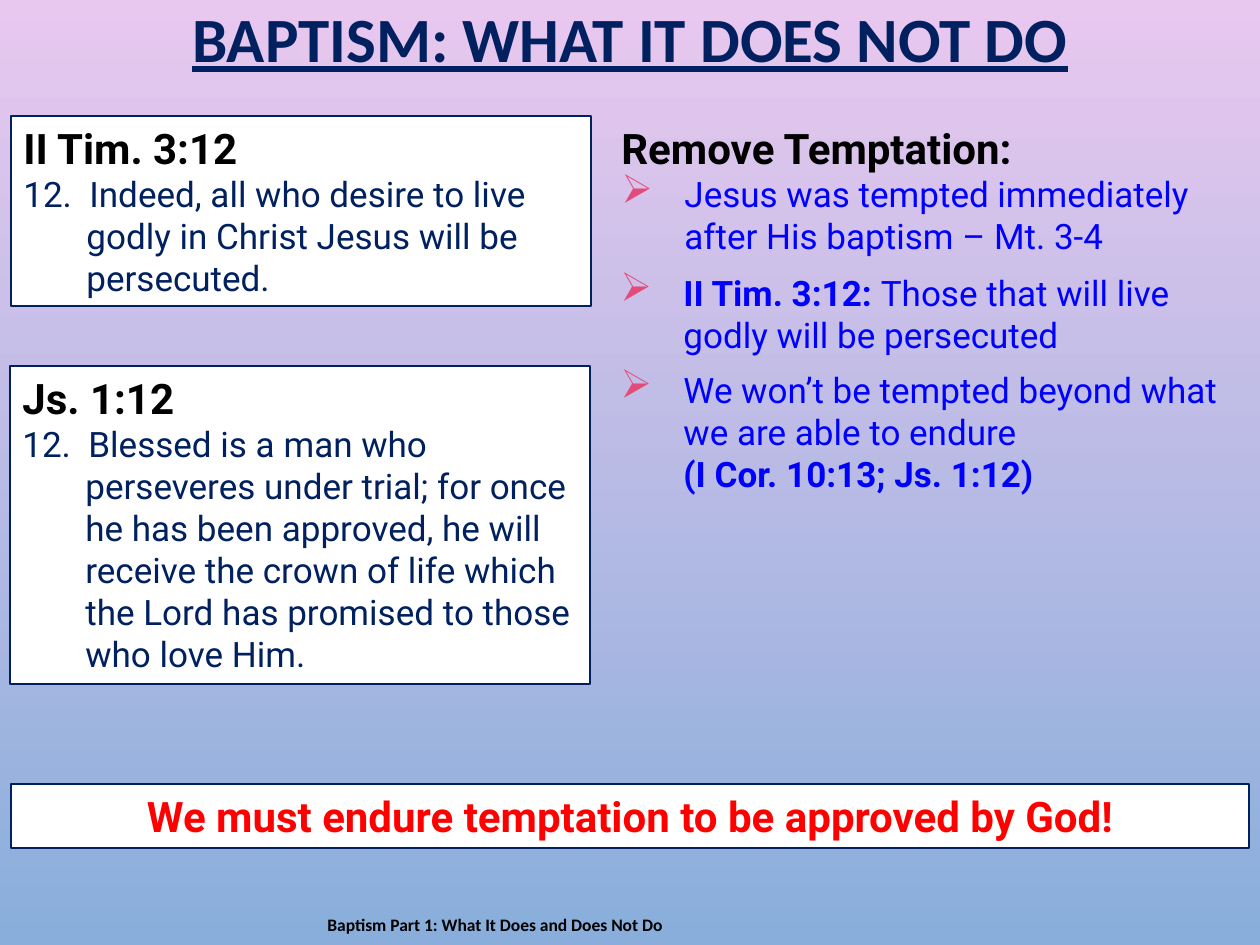
"""Build the slide on what baptism does not do."""
from dataclasses import dataclass

from lxml.etree import SubElement
from pptx import Presentation
from pptx.dml.color import RGBColor
from pptx.enum.shapes import MSO_SHAPE
from pptx.enum.text import MSO_ANCHOR, MSO_AUTO_SIZE, PP_ALIGN
from pptx.oxml.ns import qn
from pptx.util import Pt

PX = 914400 / 126


@dataclass(frozen=True)
class Theme:
    sky_top: str = "E9C8EF"
    sky_bottom: str = "89AEDB"
    navy: str = "002060"
    black: str = "000000"
    white: str = "FFFFFF"
    blue: str = "0000FF"
    red: str = "FF0000"
    bullet: str = "E34B7A"
    title_font: str = "Calibri"
    body_font: str = "Roboto"
    title_size: int = 36
    heading_size: int = 24
    body_size: int = 20
    footer_size: int = 10


THEME = Theme()
INDENT = 63

TITLE = "BAPTISM: WHAT IT DOES NOT DO"
FOOTER = "Baptism Part 1: What It Does and Does Not Do"
BANNER = "We must endure temptation to be approved by God!"

VERSES = [
    ((11, 116, 580, 190), "II Tim. 3:12",
     "12.  Indeed, all who desire to live godly in Christ Jesus will be persecuted."),
    ((10, 366, 580, 318), "Js. 1:12",
     "12.  Blessed is a man who perseveres under trial; for once he has been approved, "
     "he will receive the crown of life which the Lord has promised to those who love Him."),
]

POINTS = [
    ((609, 116, 652, 149), [
        ("heading", [("Remove Temptation:", True)]),
        ("bullet", [("Jesus was tempted immediately after His baptism – Mt. 3-4", False)]),
    ]),
    ((608, 265, 652, 97), [
        ("bullet", [("II Tim. 3:12: ", True), ("Those that will live godly will be persecuted", False)]),
    ]),
    ((608, 362, 652, 140), [
        ("bullet", [("We won’t be tempted beyond what we are able to endure", False)]),
        ("reference", [("(I Cor. 10:13; Js. 1:12)", True)]),
    ]),
]

STYLES = {
    "heading": (THEME.heading_size, THEME.black),
    "verse": (THEME.body_size, THEME.navy),
    "bullet": (THEME.body_size, THEME.blue),
    "reference": (THEME.body_size, THEME.blue),
    "banner": (THEME.heading_size, THEME.red),
}


def px(value):
    return round(value * PX)


def place(shape, frame):
    shape.left, shape.top, shape.width, shape.height = map(px, frame)


def style_font(font, name, size, colour, bold):
    font.name, font.size, font.bold = name, Pt(size), bold
    font.color.rgb = RGBColor.from_string(colour)


def indent_paragraph(para, kind):
    properties = para._p.get_or_add_pPr()
    properties.set("marL", str(px(INDENT)))
    properties.set("indent", str(0 if kind == "reference" else -px(INDENT)))
    if kind == "reference":
        para.level = 1
    if kind == "bullet":
        colour = SubElement(properties, qn("a:buClr"))
        SubElement(colour, qn("a:srgbClr"), val=THEME.bullet)
        SubElement(properties, qn("a:buSzPct"), val="115000")
        SubElement(properties, qn("a:buChar"), char="➢")
    else:
        SubElement(properties, qn("a:buNone"))
    para.alignment = PP_ALIGN.CENTER if kind == "banner" else PP_ALIGN.LEFT


def fill_text(box, paragraphs):
    text_frame = box.text_frame
    text_frame.word_wrap = True
    text_frame.auto_size = MSO_AUTO_SIZE.SHAPE_TO_FIT_TEXT
    text_frame.vertical_anchor = MSO_ANCHOR.TOP
    for index, (kind, spans) in enumerate(paragraphs):
        para = text_frame.add_paragraph() if index else text_frame.paragraphs[0]
        indent_paragraph(para, kind)
        for text, bold in spans:
            span = para.add_run()
            span.text = text
            style_font(span.font, THEME.body_font, *STYLES[kind], bold)


def add_panel(page, frame, paragraphs):
    panel = page.shapes.add_shape(MSO_SHAPE.RECTANGLE, *map(px, frame))
    panel.shadow.inherit = False
    panel.fill.solid()
    panel.fill.fore_color.rgb = RGBColor.from_string(THEME.white)
    panel.line.color.rgb = RGBColor.from_string(THEME.navy)
    panel.line.width = Pt(0.75)
    fill_text(panel, paragraphs)


def paint_background(page):
    fill = page.background.fill
    fill.gradient()
    fill.gradient_angle = 270
    for stop, colour in zip(fill.gradient_stops, (THEME.sky_top, THEME.sky_bottom)):
        stop.color.rgb = RGBColor.from_string(colour)


def add_title(page):
    title = page.shapes.title
    place(title, (0, 0, 1260, 84))
    title.text_frame.text = TITLE
    title.text_frame.auto_size = MSO_AUTO_SIZE.NONE
    title.text_frame.vertical_anchor = MSO_ANCHOR.MIDDLE
    para = title.text_frame.paragraphs[0]
    para.alignment = PP_ALIGN.CENTER
    para.line_spacing = 0.9
    font = para.runs[0].font
    style_font(font, THEME.title_font, THEME.title_size, THEME.navy, True)
    font.underline = True


def add_footer(page):
    footer = page.shapes.add_textbox(*map(px, (315, 903, 546, 42)))
    footer.text_frame.word_wrap = True
    footer.text_frame.vertical_anchor = MSO_ANCHOR.MIDDLE
    footer.text_frame.text = FOOTER
    span = footer.text_frame.paragraphs[0].runs[0]
    style_font(span.font, THEME.title_font, THEME.footer_size, THEME.black, True)


def main():
    deck = Presentation()
    deck.slide_width, deck.slide_height = px(1260), px(945)
    page = deck.slides.add_slide(deck.slide_layouts[5])
    paint_background(page)
    add_title(page)
    add_footer(page)
    for frame, paragraphs in POINTS:
        fill_text(page.shapes.add_textbox(*map(px, frame)), paragraphs)
    for frame, heading, verse in VERSES:
        add_panel(page, frame, [("heading", [(heading, True)]), ("verse", [(verse, False)])])
    add_panel(page, (11, 784, 1238, 64), [("banner", [(BANNER, True)])])
    deck.save("out.pptx")


if __name__ == "__main__":
    main()
